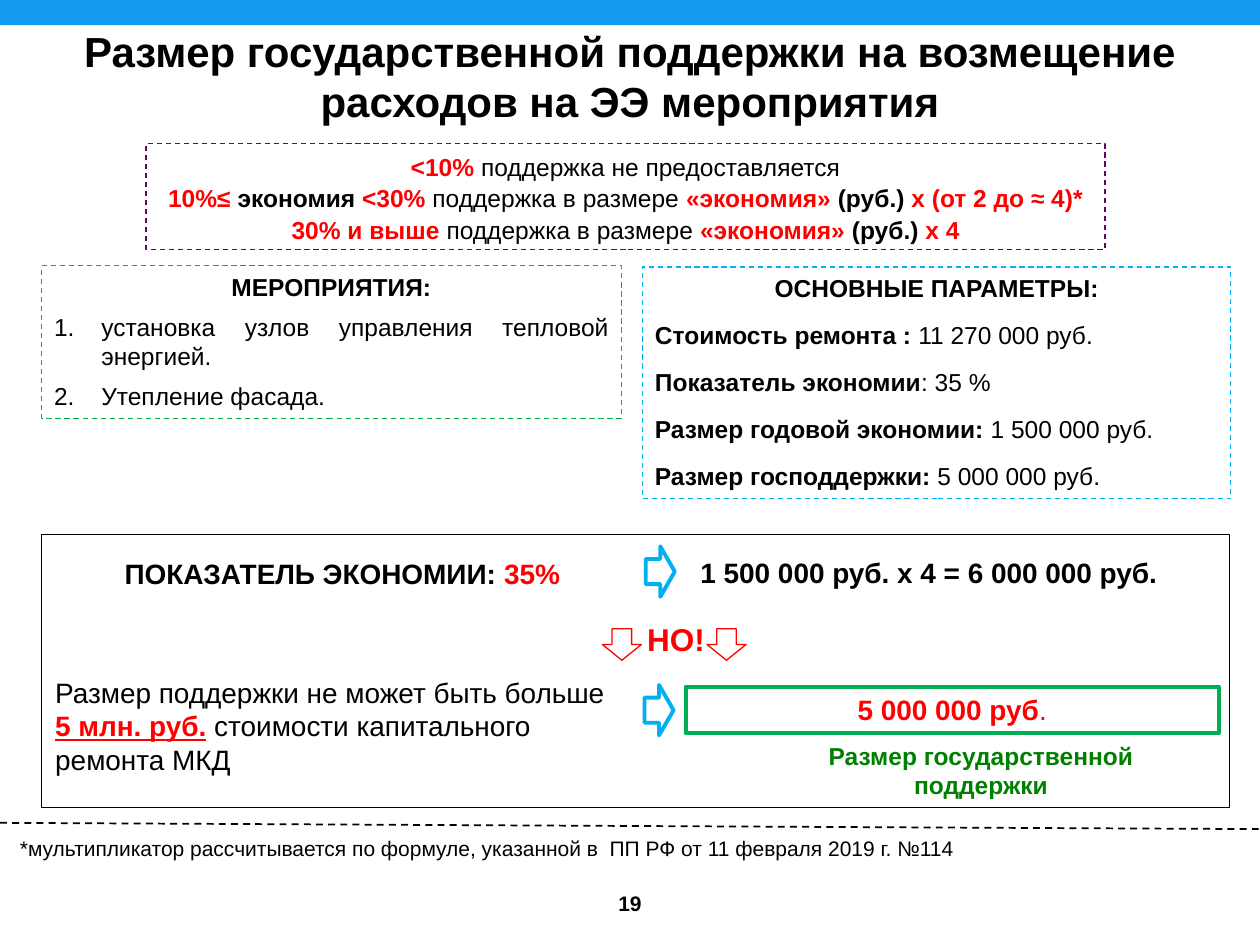
import pptx
import pptx.util
import pptx.dml.color
import pptx.enum.dml
import pptx.enum.shapes
import pptx.enum.text
import pptx.oxml.ns
from lxml import etree

Pt = pptx.util.Pt
KIND = pptx.enum.shapes.MSO_SHAPE
ALIGN = pptx.enum.text.PP_ALIGN
ANCHOR = pptx.enum.text.MSO_ANCHOR
DASH = pptx.enum.dml.MSO_LINE.DASH
MID, LEFT, JUST = ALIGN.CENTER, ALIGN.LEFT, ALIGN.JUSTIFY
BLACK, RED, GREEN, SKY = "000000", "FF0000", "00B050", "00B0F0"


def tint(code):
    return pptx.dml.color.RGBColor.from_string(code)


def stroke(line, code, width, dash=None):
    line.color.rgb = tint(code)
    line.width = Pt(width)
    if dash:
        line.dash_style = dash


def shape(slide, kind, box, line=None, width=0.75, dash=None, fill=None, turn=0):
    item = slide.shapes.add_shape(kind, *map(Pt, box))
    item.shadow.inherit = False
    item.rotation = turn
    if fill:
        item.fill.solid()
        item.fill.fore_color.rgb = tint(fill)
    else:
        item.fill.background()
    if line:
        stroke(item.line, line, width, dash)
    else:
        item.line.fill.background()
    return item


def label(slide, box, lines, **style):
    write(slide.shapes.add_textbox(*map(Pt, box)), lines, **style)


def write(item, lines, size=14, align=MID, anchor=ANCHOR.TOP, wrap=True,
          before=0, after=0, space=None):
    """Each line is a list of runs: (text, colour, bold, underline)."""
    frame = item.text_frame
    frame.word_wrap = wrap
    frame.vertical_anchor = anchor
    for n, runs in enumerate(lines):
        para = frame.paragraphs[0] if n == 0 else frame.add_paragraph()
        para.alignment = align
        para.space_before, para.space_after = Pt(before), Pt(after)
        if space:
            para.line_spacing = space
        for words, code, bold, *under in runs:
            run = para.add_run()
            run.text = words
            font = run.font
            font.name, font.size, font.bold = "Arial", Pt(size), bold
            font.color.rgb = tint(code)
            if under:
                font.underline = True


def number(para, indent):
    props = para._p.get_or_add_pPr()
    props.set("marL", str(Pt(indent)))
    props.set("indent", str(-Pt(indent)))
    mark = etree.SubElement(props, pptx.oxml.ns.qn("a:buAutoNum"))
    mark.set("type", "arabicPeriod")


def header(slide, x, y, w, h):
    shape(slide, KIND.RECTANGLE, (x, y, w, 14.4), fill="139AF0")
    label(slide, (x + 35.3, y + 10.8, w - 70.6, h - 10.8),
          [[("Размер государственной поддержки на возмещение расходов "
             "на ЭЭ мероприятия", BLACK, True)]], size=24)


def rules(slide, *box):
    save = [("поддержка в размере ", BLACK, False),
            ("«экономия» ", RED, True), ("(руб.) ", BLACK, True)]
    write(shape(slide, KIND.RECTANGLE, box, "670067", dash=DASH), [
        [("<10% ", RED, True), ("поддержка не предоставляется", BLACK, False)],
        [("10%≤ ", RED, True), ("экономия ", BLACK, True), ("<30% ", RED, True),
         *save, ("х (от 2 до ≈ 4)*", RED, True)],
        [("30% и выше ", RED, True), *save, ("х 4", RED, True)],
    ], space=1.07)


def measures(slide, *box):
    item = shape(slide, KIND.RECTANGLE, box, GREEN, dash=DASH)
    steps = ["установка узлов управления тепловой энергией.", "Утепление фасада."]
    write(item, [[("МЕРОПРИЯТИЯ:", BLACK, True)],
                 *[[(step, BLACK, False)] for step in steps]],
          align=JUST, before=6)
    title, *rest = item.text_frame.paragraphs
    title.alignment = MID
    for para in rest:
        number(para, 27)


def params(slide, *box):
    item = shape(slide, KIND.RECTANGLE, box, SKY, dash=DASH)
    facts = [("Стоимость ремонта : ", "11 270 000 руб."),
             ("Показатель экономии", ": 35 %"),
             ("Размер годовой экономии: ", "1 500 000 руб."),
             ("Размер господдержки: ", "5 000 000 руб.")]
    write(item, [[("ОСНОВНЫЕ ПАРАМЕТРЫ:", BLACK, True)],
                 *[[(name, BLACK, True), (value, BLACK, False)]
                   for name, value in facts]],
          align=JUST, before=4, after=6)
    item.text_frame.paragraphs[0].alignment = MID


def result(slide, x, y, w, h):
    shape(slide, KIND.RECTANGLE, (x, y, w, h), BLACK)

    # Savings rate and the sum it gives
    label(slide, (x + 38.6, y + 9.4, 266.4, 26.6),
          [[("ПОКАЗАТЕЛЬ ЭКОНОМИИ: ", BLACK, True), ("35%", RED, True)]],
          size=16, wrap=False)
    label(slide, (x + 327, y + 6, 360, 32),
          [[("1 500 000 руб. х 4 = 6 000 000 руб.", BLACK, True)]],
          size=16, anchor=ANCHOR.MIDDLE)

    # Arrows to the right
    for dx, dy in ((339.1, 13), (338.4, 92.2)):
        shape(slide, KIND.DOWN_ARROW, (x + dx, y + dy, 28.8, 16.6),
              SKY, 2.25, turn=270)

    # Warning between two arrows
    label(slide, (x + 331.2, y + 45.4, 62.6, 28.8), [[("НО!", RED, True)]], size=18)
    for dx in (320.4, 380.2):
        shape(slide, KIND.DOWN_ARROW, (x + dx, y + 54, 22.3, 18), RED)

    # Cap and the final sum
    label(slide, (x + 0.7, y + 77, 350.6, 65.5),
          [[("Размер поддержки не может быть больше", BLACK, False)],
           [("5 млн. руб.", RED, True, True),
            (" стоимости капитального ремонта МКД", BLACK, False)]],
          size=16, align=LEFT)
    write(shape(slide, KIND.RECTANGLE, (x + 368, y + 87.1, 304.6, 26.6), GREEN, 2.25),
          [[("5 000 000 руб", RED, True), (".", RED, False)]], size=16)
    label(slide, (x + 431.3, y + 114.5, 211, 41),
          [[("Размер государственной поддержки", "008000", True)]], after=6)


def footer(slide, x, y, w, h):
    rule = slide.shapes.add_connector(
        pptx.enum.shapes.MSO_CONNECTOR.STRAIGHT,
        Pt(x), Pt(y), Pt(x + w), Pt(y + 3.6))
    stroke(rule.line, BLACK, 1, DASH)
    etree.SubElement(rule._element.spPr, pptx.oxml.ns.qn("a:effectLst"))
    label(slide, (x + 4.3, y + 3.6, w - 10, 21.6),
          [[("*мультипликатор рассчитывается по формуле, указанной в  "
             "ПП РФ от 11 февраля 2019 г. №114", BLACK, False)]],
          size=12, align=JUST)
    label(slide, (x + w / 2 - 31.7, y + h - 28, 63.4, 28),
          [[("19", BLACK, True)]], size=12, anchor=ANCHOR.MIDDLE)


def main():
    deck = pptx.Presentation()
    deck.slide_width, deck.slide_height = Pt(720), Pt(540)
    slide = deck.slides.add_slide(deck.slide_layouts[6])
    header(slide, 0, 0, 720, 76.3)
    rules(slide, 83.5, 82.1, 547.9, 60.5)
    params(slide, 367.2, 152.6, 336.2, 132.5)
    measures(slide, 23.8, 151.9, 331.2, 87.1)
    result(slide, 23.8, 305.3, 679, 156.2)
    footer(slide, 0, 470.2, 720, 59.8)
    deck.save("out.pptx")


if __name__ == "__main__":
    main()
